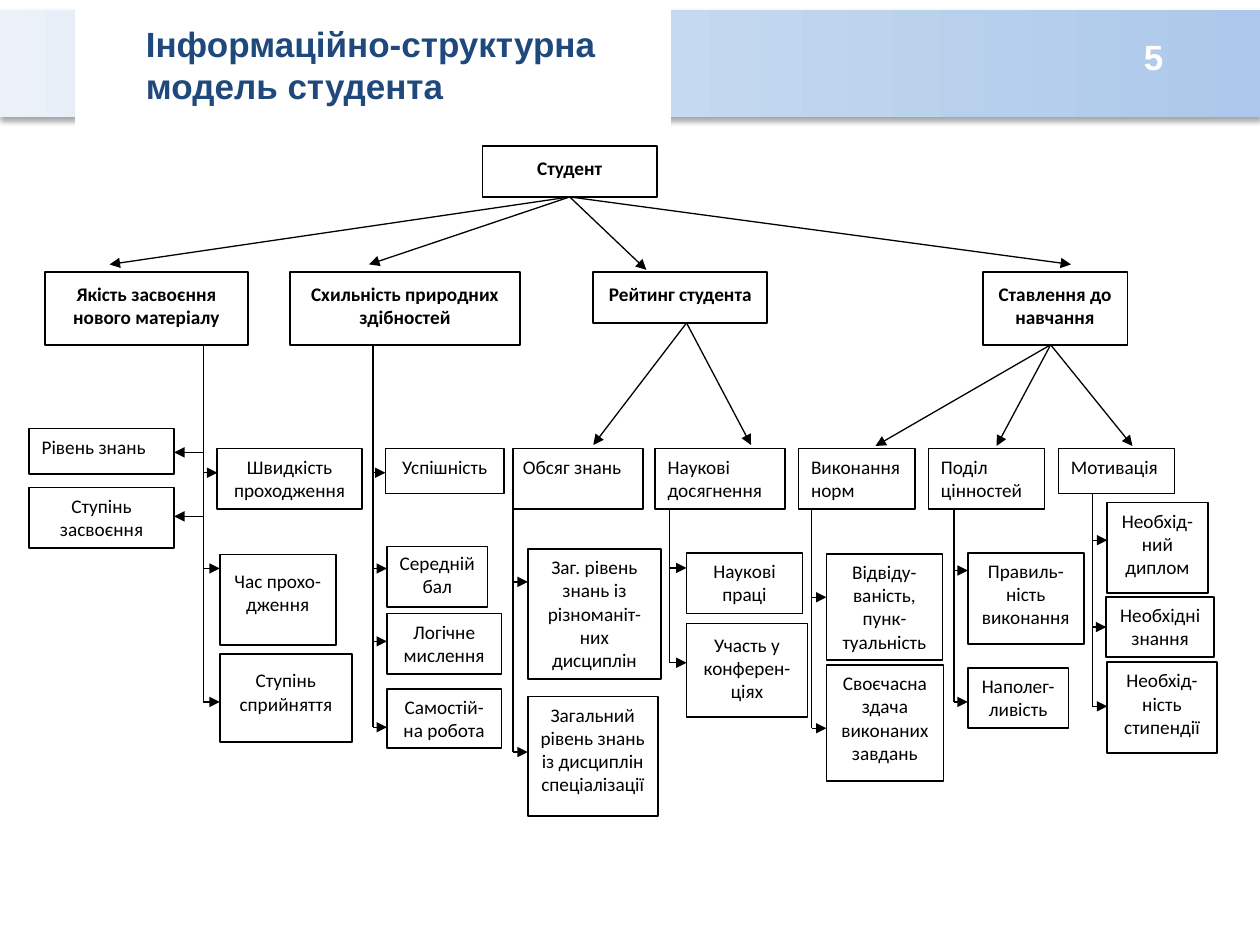
from lxml import etree
from pptx import Presentation
from pptx.dml.color import RGBColor
from pptx.enum.shapes import MSO_CONNECTOR, MSO_SHAPE
from pptx.enum.text import MSO_ANCHOR, MSO_AUTO_SIZE, PP_ALIGN
from pptx.oxml import parse_xml
from pptx.oxml.ns import nsdecls, qn
from pptx.util import Cm, Pt

RECTANGLE = MSO_SHAPE.RECTANGLE
STRAIGHT = MSO_CONNECTOR.STRAIGHT
TOP = MSO_ANCHOR.TOP
NO_AUTOFIT = MSO_AUTO_SIZE.NONE
LEFT, CENTER = PP_ALIGN.LEFT, PP_ALIGN.CENTER

BLACK = RGBColor(0x00, 0x00, 0x00)
WHITE = RGBColor(0xFF, 0xFF, 0xFF)
NAVY = RGBColor(0x1F, 0x49, 0x7D)
BAND_STOPS = [
    (0, RGBColor(0xAC, 0xC8, 0xEA)),
    (80, RGBColor(0xD8, 0xE5, 0xF4)),
    (100, RGBColor(0xED, 0xF2, 0xF9)),
]

# Boxes are (left, top, width, height) in centimetres
ROOT = (9.73, 2.95, 3.51, 1.02)
ROOT_TARGETS = [(2.21, 5.33), (7.44, 5.33), (13.03, 5.44), (21.59, 5.33)]

# Main topics: text, box, fan start, fan targets
FANNED_TOPICS = [
    ("Рейтинг студента", (11.96, 5.49, 3.51, 1.02), (13.84, 6.51),
     [(11.96, 8.97), (15.14, 8.97)]),
    ("Ставлення до навчання", (19.81, 5.49, 2.92, 1.47), (21.18, 6.95),
     [(17.65, 8.99), (20.09, 8.99), (22.83, 8.99)]),
]

MAIN = dict(bold=True, inset_top=0.2)
# Branches: heading, box, heading format, trunk offset, leaves.
# Leaves: text, box relative to the trunk's top, arrow's drop, format
BRANCHES = [
    ("Якість засвоєння нового матеріалу", (0.91, 5.49, 4.09, 1.47), MAIN, 3.19, [
        ("Рівень знань", (-3.51, 1.68, 2.92, 0.91), 2.16, dict(align=LEFT)),
        ("Ступінь засвоєння", (-3.51, 2.87, 2.92, 1.22), 3.45, {}),
        ("Швидкість проходження", (0.28, 2.08, 2.92, 1.22), 2.57, {}),
        ("Час прохо-дження", (0.33, 4.22, 2.34, 1.83), 4.5, dict(inset_top=0.3)),
        ("Ступінь сприйняття", (0.33, 6.22, 2.67, 1.78), 7.19, dict(inset_top=0.3)),
    ]),
    ("Схильність природних здібностей", (5.84, 5.49, 4.65, 1.47), MAIN, 1.68, [
        ("Успішність", (0.25, 2.08, 2.39, 0.91), 2.57, {}),
        ("Середній бал", (0.28, 4.06, 2.03, 1.22), 4.5, dict(inset_top=0.1)),
        ("Логічне мислення", (0.28, 5.41, 2.31, 1.22), 5.97, {}),
        ("Самостій-на робота", (0.28, 6.93, 2.31, 1.19), 7.7, {}),
    ]),
    ("Обсяг знань", (10.34, 9.04, 2.62, 1.22), dict(align=LEFT, inset_side=0.2), 0, [
        ("Заг. рівень знань із різноманіт-них дисциплін", (0.3, 0.81, 2.69, 2.62), 1.47, {}),
        ("Загальний рівень знань із дисциплін спеціалізації", (0.3, 3.78, 2.62, 2.41), 4.9, {}),
    ]),
    ("Наукові досягнення", (13.21, 9.04, 2.62, 1.22), dict(align=LEFT), 0.29, [
        ("Наукові праці", (0.34, 0.89, 2.34, 1.22), 1.19, {}),
        ("Участь у конферен-ціях", (0.34, 2.31, 2.44, 1.88), 3.1, dict(inset_top=0.2)),
    ]),
    ("Виконання норм", (16.1, 9.04, 2.34, 1.22), dict(align=LEFT), 0.26, [
        ("Відвіду-ваність, пунк-туальність", (0.3, 0.91, 2.34, 2.13), 1.78, {}),
        ("Своєчасна здача виконаних завдань", (0.3, 3.15, 2.36, 2.34), 4.42, {}),
    ]),
    ("Поділ цінностей", (18.72, 9.04, 2.34, 1.22), dict(align=LEFT), 0.51, [
        ("Правиль-ність виконання", (0.28, 0.89, 2.34, 1.83), 1.24, {}),
        ("Наполег-ливість", (0.28, 3.2, 2.03, 1.22), 3.89, {}),
    ]),
    ("Мотивація", (21.34, 9.04, 2.34, 0.91), dict(align=LEFT), 0.68, [
        ("Необхід-ний диплом", (0.3, 0.18, 2.03, 1.83), 0.94, {}),
        ("Необхідні знання", (0.28, 2.08, 2.18, 1.22), 2.69, {}),
        ("Необхід-ність стипендії", (0.3, 3.4, 2.21, 1.83), 4.29, {}),
    ]),
]


def write_text(shape, text, size=11, font="Calibri", color=BLACK, bold=False,
               align=CENTER, wrap=True, after=0, inset_top=0.13, inset_side=0.25):
    frame = shape.text_frame
    frame.text = text
    frame.word_wrap = wrap
    frame.auto_size = NO_AUTOFIT
    frame.vertical_anchor = TOP
    frame.margin_left = frame.margin_right = Cm(inset_side)
    frame.margin_top, frame.margin_bottom = Cm(inset_top), Cm(0.13)
    for paragraph in frame.paragraphs:
        paragraph.alignment = align
        paragraph.space_after = Pt(after)
        for run in paragraph.runs:
            run.font.size, run.font.name = Pt(size), font
            run.font.bold, run.font.color.rgb = bold, color


def add_box(slide, box, outline=BLACK, weight=1):
    rectangle = slide.shapes.add_shape(RECTANGLE, *map(Cm, box))
    rectangle.shadow.inherit = False
    rectangle.fill.solid()
    rectangle.fill.fore_color.rgb = WHITE
    rectangle.line.color.rgb = outline
    rectangle.line.width = Pt(weight)
    return rectangle


def add_node(slide, text, box, **text_format):
    write_text(add_box(slide, box), text, after=10, **text_format)


def add_line(slide, start, end, arrow=True):
    line = slide.shapes.add_connector(STRAIGHT, *map(Cm, (*start, *end)))
    line.line.color.rgb = BLACK
    line.line.width = Pt(0.75)
    if arrow:
        etree.SubElement(line.line._get_or_add_ln(), qn("a:tailEnd"), type="triangle")
    etree.SubElement(line._element.spPr, qn("a:effectLst"))


def add_fan(slide, start, targets):
    for target in targets:
        add_line(slide, start, target)


def add_branch(slide, heading, box, heading_format, trunk_offset, leaves):
    """Heading with a trunk below it and an arrow to every leaf."""
    left, top, _, height = box
    trunk_x, trunk_top = left + trunk_offset, top + height
    add_node(slide, heading, box, **heading_format)
    for text, (dx, dy, leaf_width, leaf_height), drop, leaf_format in leaves:
        leaf_left = trunk_x + dx
        add_node(slide, text, (leaf_left, trunk_top + dy, leaf_width, leaf_height),
                 **leaf_format)
        near_edge = leaf_left if dx > 0 else leaf_left + leaf_width
        add_line(slide, (trunk_x, trunk_top + drop), (near_edge, trunk_top + drop))
    trunk_end = trunk_top + max(drop for _, _, drop, _ in leaves)
    add_line(slide, (trunk_x, trunk_top), (trunk_x, trunk_end), arrow=False)


def add_header(slide, box):
    left, top, _, _ = box
    # Gradient band with a soft shadow
    band = add_box(slide, box)
    band.line.fill.background()
    band.fill.background()
    properties = band._element.spPr
    stops = "".join(f'<a:gs pos="{position * 1000}"><a:srgbClr val="{color}"/></a:gs>'
                    for position, color in BAND_STOPS)
    properties.replace(properties.find(qn("a:noFill")), parse_xml(
        f'<a:gradFill {nsdecls("a")} rotWithShape="1"><a:gsLst>{stops}</a:gsLst>'
        '<a:lin ang="10800000" scaled="0"/></a:gradFill>'))
    properties.replace(properties.find(qn("a:effectLst")), parse_xml(
        f'<a:effectLst {nsdecls("a")}><a:outerShdw blurRad="{Pt(3.1)}" '
        f'dist="{Pt(1.8)}" dir="5400000" rotWithShape="0"><a:srgbClr val="{BLACK}">'
        '<a:alpha val="35000"/></a:srgbClr></a:outerShdw></a:effectLst>'))
    # White plate under the title
    add_box(slide, (left + 1.55, top - 0.07, 11.94, 2.39), outline=WHITE, weight=2)
    # Title, brought in front of the plate
    title = slide.shapes.title
    title.left, title.top = Cm(left + 2.69), Cm(top + 0.13)
    title.width, title.height = Cm(9.65), Cm(1.96)
    heading = dict(size=20, font="Arial", bold=True, align=LEFT)
    write_text(title, "Інформаційно-структурна\nмодель студента",
               color=NAVY, wrap=False, **heading)
    slide.shapes._spTree.append(title._element)
    # Page number
    number = slide.shapes.add_textbox(Cm(left + 22.81), Cm(top + 0.38), Cm(1.57), Cm(1.12))
    write_text(number, "5", color=WHITE, **heading)


def add_model(slide):
    left, top, width, height = ROOT
    add_node(slide, "Студент", ROOT, **MAIN)
    add_fan(slide, (left + width / 2, top + height), ROOT_TARGETS)
    for text, box, start, targets in FANNED_TOPICS:
        add_node(slide, text, box, **MAIN)
        add_fan(slide, start, targets)
    for branch in BRANCHES:
        add_branch(slide, *branch)


def main():
    presentation = Presentation()
    presentation.slide_width, presentation.slide_height = Cm(25.4), Cm(19.05)
    slide = presentation.slides.add_slide(presentation.slide_layouts[5])
    add_header(slide, (0, 0.2, 25.4, 2.16))
    add_model(slide)
    presentation.save("out.pptx")


if __name__ == "__main__":
    main()
